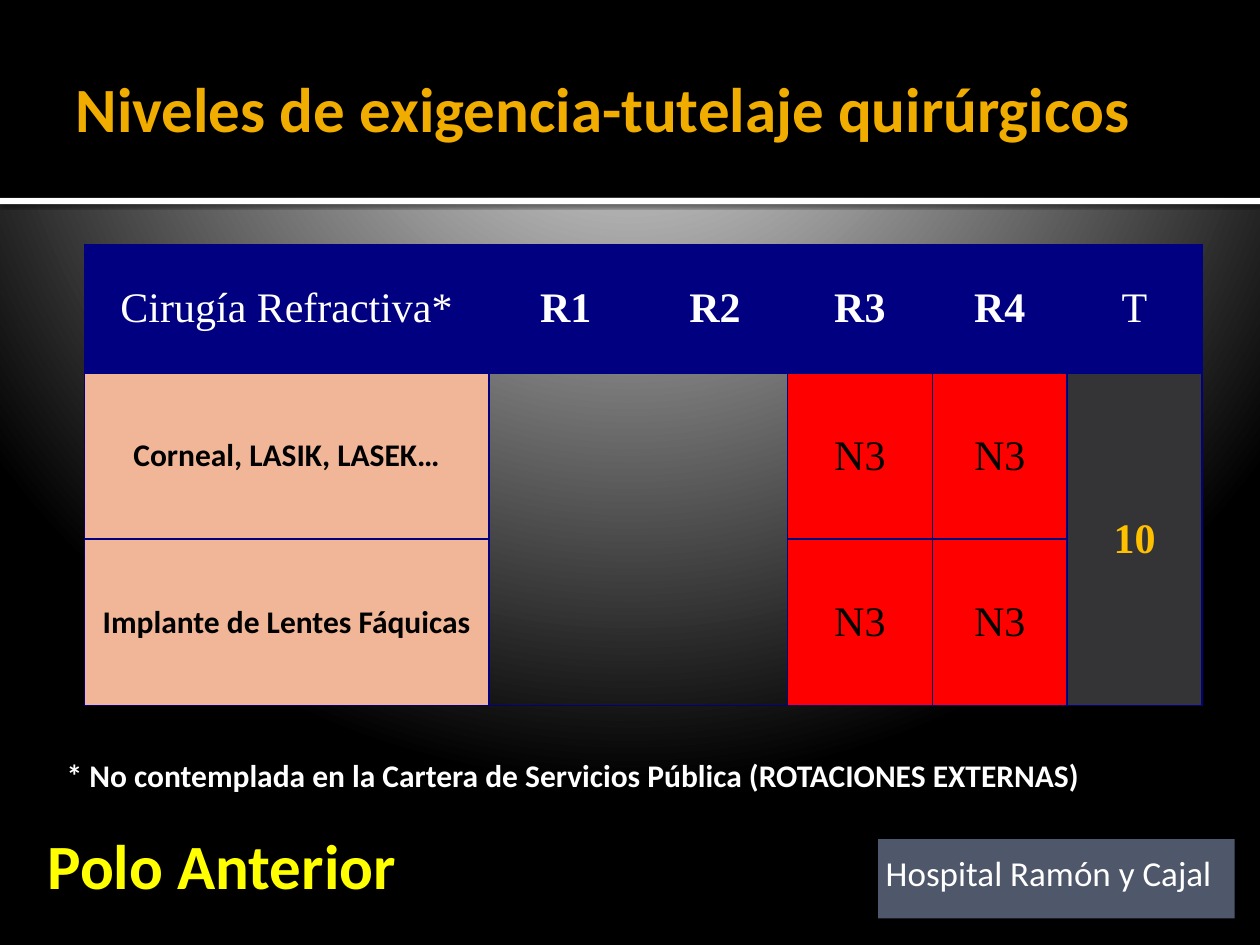
from lxml.etree import SubElement
from pptx import Presentation
from pptx.dml.color import RGBColor
from pptx.enum.shapes import MSO_SHAPE
from pptx.enum.text import MSO_ANCHOR, MSO_AUTO_SIZE, PP_ALIGN
from pptx.oxml import parse_xml
from pptx.oxml.ns import nsdecls, qn
from pptx.util import Inches, Pt

NAVY, WHITE, BLACK, RED = "000080", "FFFFFF", "000000", "FF0000"
SERIF = "Times New Roman"


def color(hex_value):
    """Turn a hex string into a colour."""
    return RGBColor.from_string(hex_value)


def write(frame, text, size=18, font="Calibri", ink=WHITE, bold=False,
          align=PP_ALIGN.LEFT, anchor=MSO_ANCHOR.TOP):
    """Put one formatted line of text in a text frame."""
    frame.vertical_anchor = anchor
    paragraph = frame.paragraphs[0]
    paragraph.alignment = align
    run = paragraph.add_run()
    run.text = text
    run.font.size, run.font.name, run.font.bold = Pt(size), font, bold
    run.font.color.rgb = color(ink)


def set_insets(frame, left, top, right, bottom):
    """Set the inner margins of a text frame or cell in inches."""
    frame.margin_left, frame.margin_top = Inches(left), Inches(top)
    frame.margin_right, frame.margin_bottom = Inches(right), Inches(bottom)


def place(shape, left, top, width, height):
    """Move and size a shape in inches."""
    shape.left, shape.top = Inches(left), Inches(top)
    shape.width, shape.height = Inches(width), Inches(height)


def add_panel(slide, box, fill):
    """Add a plain filled rectangle."""
    panel = slide.shapes.add_shape(MSO_SHAPE.RECTANGLE, *map(Inches, box))
    panel.shadow.inherit = False
    panel.fill.solid()
    panel.fill.fore_color.rgb = color(fill)
    panel.line.fill.background()
    return panel


def add_label(slide, box, text, **style):
    """Add a wrapping text box."""
    frame = slide.shapes.add_textbox(*map(Inches, box)).text_frame
    frame.word_wrap = True
    frame.auto_size = MSO_AUTO_SIZE.SHAPE_TO_FIT_TEXT
    write(frame, text, **style)


def paint_background(slide):
    """Give the slide a radial grey to black background."""
    slide.background.fill.solid()
    solid = slide.element.find(".//" + qn("p:bgPr"))[0]
    stops = [(0, "C0C0C0"), (12, "C0C0C0"), (20, "BEBEBE"), (100, BLACK)]
    stop_xml = "".join(
        f'<a:gs pos="{position * 1000}"><a:srgbClr val="{shade}"/></a:gs>'
        for position, shade in stops)
    solid.getparent().replace(solid, parse_xml(
        f'<a:gradFill {nsdecls("a")} rotWithShape="1"><a:gsLst>{stop_xml}</a:gsLst>'
        '<a:path path="circle"><a:fillToRect l="10000" t="-25000" r="10000" b="125000"/>'
        '</a:path></a:gradFill>'))


def cast_shadow(shape):
    """Drop a soft black shadow below a shape."""
    effects = shape.element.spPr.find(qn("a:effectLst"))
    shadow = SubElement(effects, qn("a:outerShdw"), blurRad=str(Pt(2.5)),
                        dist=str(Pt(0.8)), dir="5400000", rotWithShape="0")
    ink = SubElement(shadow, qn("a:srgbClr"), val=BLACK)
    SubElement(ink, qn("a:alpha"), val="60000")


def outline_cell(cell, ink=NAVY, width=1):
    """Draw the four borders of a cell."""
    properties = cell._tc.get_or_add_tcPr()
    for index, side in enumerate(("lnL", "lnR", "lnT", "lnB")):
        properties.insert(index, parse_xml(
            f'<a:{side} {nsdecls("a")} w="{Pt(width)}"><a:solidFill>'
            f'<a:srgbClr val="{ink}"/></a:solidFill></a:{side}>'))


def fill_cell(cell, text, fill, **style):
    """Fill a cell and write its centred text."""
    cell.fill.solid()
    cell.fill.fore_color.rgb = color(fill)
    write(cell.text_frame, text, align=PP_ALIGN.CENTER, **style)


def add_levels_table(slide):
    """Add the table of required levels per residency year."""
    widths, heights = [3.21, 1.22, 1.15, 1.15, 1.07, 1.07], [1.02, 1.32, 1.32]
    table = slide.shapes.add_table(
        3, 6, *map(Inches, (0.67, 1.94, sum(widths), sum(heights)))).table
    table.first_row = table.horz_banding = False
    for column, width in zip(table.columns, widths):
        column.width = Inches(width)
    for row, height in zip(table.rows, heights):
        row.height = Inches(height)
    for cell in table.iter_cells():
        cell.fill.background()
        cell.vertical_anchor = MSO_ANCHOR.MIDDLE
        set_insets(cell, 0.07, 0, 0.07, 0)
        outline_cell(cell)
    table.cell(1, 1).merge(table.cell(2, 2))
    table.cell(1, 5).merge(table.cell(2, 5))

    headings = ["Cirugía Refractiva*", "R1", "R2", "R3", "R4", "T"]
    for column, heading in enumerate(headings):
        fill_cell(table.cell(0, column), heading, NAVY, size=24, font=SERIF,
                  bold=heading.startswith("R"))
    procedures = ["Corneal, LASIK, LASEK…", "Implante de Lentes Fáquicas"]
    for row, procedure in enumerate(procedures, start=1):
        fill_cell(table.cell(row, 0), procedure, "F1B697", ink=BLACK, bold=True)
        for column in (3, 4):
            fill_cell(table.cell(row, column), "N3", RED, size=24, font=SERIF, ink=BLACK)
    fill_cell(table.cell(1, 5), "10", "343437", size=24, font=SERIF,
              ink="FFC000", bold=True)
    for cell in table.iter_cells():
        cell.vertical_anchor = MSO_ANCHOR.MIDDLE


def add_title(slide, text):
    """Format the title and bring it in front of its band."""
    title = slide.shapes.title
    place(title, 0.5, 0.17, 9, 1.37)
    set_insets(title.text_frame, 0.1, 0.05, 0.05, 0.05)
    write(title.text_frame, text, size=36, ink="F0AD00", bold=True,
          anchor=MSO_ANCHOR.MIDDLE)
    title.element.getparent().append(title.element)


def main():
    """Build and save the slide."""
    deck = Presentation()
    deck.slide_width, deck.slide_height = Inches(10), Inches(7.5)
    slide = deck.slides.add_slide(deck.slide_layouts[5])
    paint_background(slide)
    cast_shadow(add_panel(slide, (0, 1.57, 10, 0.05), WHITE))
    add_panel(slide, (0, 0, 10, 1.57), BLACK)
    add_title(slide, "Niveles de exigencia-tutelaje quirúrgicos")
    add_label(slide, (0.28, 6.51, 3.07, 0.71), "Polo Anterior",
              size=36, ink="FFFF00", bold=True)
    hospital = add_panel(slide, (6.97, 6.66, 2.83, 0.63), "4F576A").text_frame
    set_insets(hospital, 0.06, 0.1, 0.1, 0.05)
    write(hospital, "Hospital Ramón y Cajal", size=20)
    add_levels_table(slide)
    add_label(slide, (0.43, 5.95, 8.98, 0.4),
              "* No contemplada en la Cartera de Servicios Pública (ROTACIONES EXTERNAS)",
              bold=True)
    deck.save("out.pptx")


if __name__ == "__main__":
    main()
